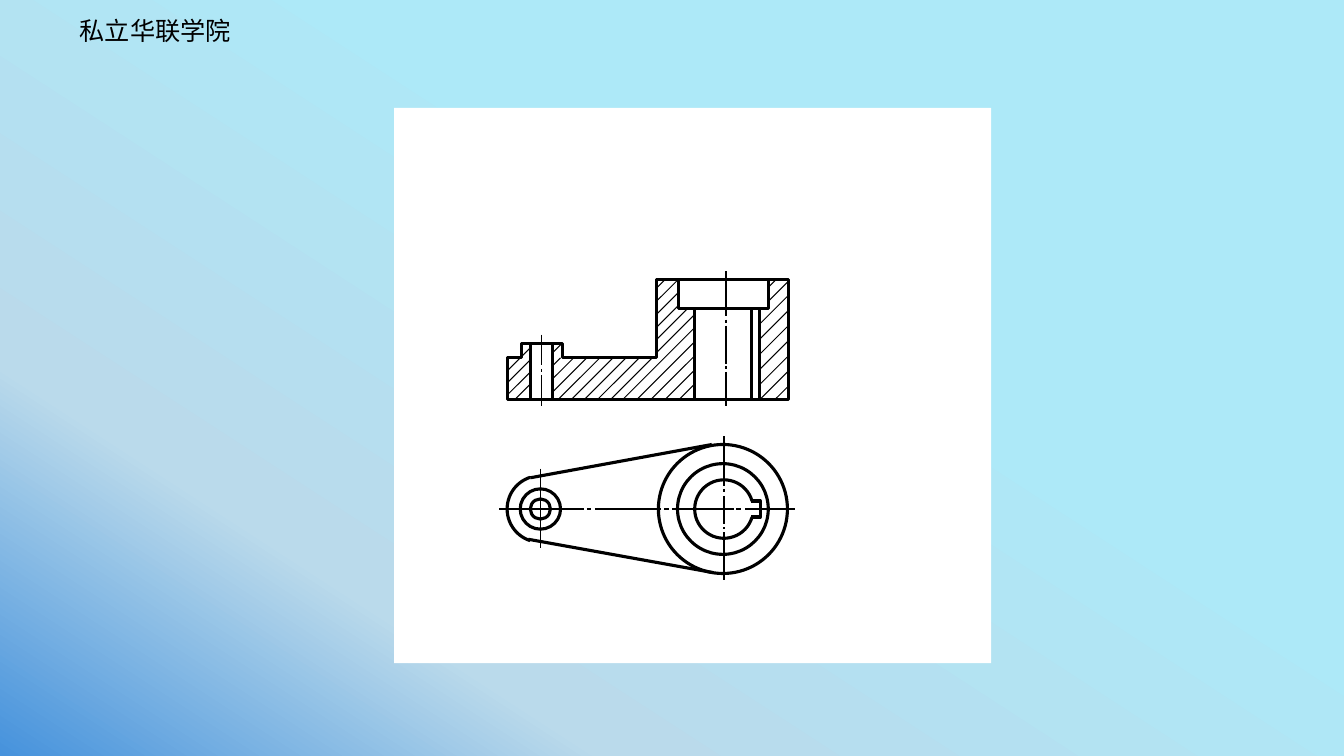
import copy
import math

from pptx import Presentation
from pptx import util as u
from pptx.dml.color import RGBColor
from pptx.enum import shapes, text
from pptx.oxml.ns import qn

COLORS = {"ink": "000000", "sheet": "FFFFFF",
          "deep": "4692DC", "pale": "BADAEB", "sky": "ADE9F8"}
FONT = "Noto Sans CJK JP"
EDGE, AXIS, HATCH = 2.25, 1, 0.75  # line widths in points


def rgb(name):
    return RGBColor.from_string(COLORS[name])


class View:
    """Draws on a slide in inches from the top left corner of one view."""

    def __init__(self, slide, left, top):
        self.shapes, self.left, self.top = slide.shapes, left, top

    def place(self, x, y):
        return u.Inches(self.left + x), u.Inches(self.top + y)

    def ink(self, shape, width):
        shape.line.color.rgb = rgb("ink")
        shape.line.width = u.Pt(width)

    def line(self, start, end, width=EDGE):
        connector = self.shapes.add_connector(
            shapes.MSO_CONNECTOR.STRAIGHT, *self.place(*start), *self.place(*end))
        self.ink(connector, width)
        properties = connector._element.spPr
        properties.append(properties.makeelement(qn("a:effectLst"), {}))

    def outline(self, points, close=False):
        first, *others = [self.place(*point) for point in points]
        builder = self.shapes.build_freeform(*first, scale=1.0)
        builder.add_line_segments(others, close=close)
        shape = builder.convert_to_shape()
        shape.shadow.inherit = False
        shape.fill.background()
        self.ink(shape, EDGE)

    def circle(self, centre, radius):
        x, y = centre
        shape = self.shapes.add_shape(
            shapes.MSO_SHAPE.OVAL, *self.place(x - radius, y - radius),
            u.Inches(2 * radius), u.Inches(2 * radius))
        shape.shadow.inherit = False
        shape.fill.background()
        self.ink(shape, EDGE)

    def arc(self, centre, radius, start, end, steps=48):
        """Open arc; degrees run clockwise from the right."""
        angles = [math.radians(start + (end - start) * i / steps)
                  for i in range(steps + 1)]
        self.outline([(centre[0] + radius * math.cos(a),
                       centre[1] + radius * math.sin(a)) for a in angles])

    def vertical_axis(self, x, dashes):
        for start, end in dashes:
            self.line((x, start), (x, end), AXIS)

    def horizontal_axis(self, y, dashes):
        for start, end in dashes:
            self.line((start, y), (end, y), AXIS)

    def hatch(self, box, first, step, count):
        """Lines x + y = constant, clipped to the box."""
        left, top, right, bottom = box
        for i in range(count):
            total = first + i * step
            x_low, x_high = max(left, total - bottom), min(right, total - top)
            self.line((x_low, total - x_low), (x_high, total - x_high), HATCH)


def paint_background(slide):
    fill = slide.background.fill
    fill.gradient()
    fill.gradient_angle = 57
    stop_list = slide.background._cSld.find(".//" + qn("a:gsLst"))
    stop_list.append(copy.deepcopy(stop_list[-1]))
    stops = zip(fill.gradient_stops, (("deep", 0), ("pale", 0.24), ("sky", 0.62)))
    for stop, (name, position) in stops:
        stop.color.rgb = rgb(name)
        stop.position = position


def school_name(slide, left, top, width, height):
    box = slide.shapes.add_textbox(*map(u.Inches, (left, top, width, height)))
    frame = box.text_frame
    inset = u.Inches(0.05)
    settings = {"word_wrap": True, "auto_size": text.MSO_AUTO_SIZE.SHAPE_TO_FIT_TEXT,
                "margin_left": inset, "margin_right": inset,
                "margin_top": inset, "margin_bottom": inset}
    for key, value in settings.items():
        setattr(frame, key, value)
    run = frame.paragraphs[0].add_run()
    run.text = "私立华联学院"
    run.font.size, run.font.name = u.Pt(18), FONT
    run.font.color.rgb = rgb("ink")
    properties = run.font._element
    properties.append(properties.makeelement(qn("a:ea"), {"typeface": FONT}))


def section_view(slide, left, top):
    view = View(slide, left, top)
    hatched_areas = [
        ((0, 0.69, 0.22, 1.2), 0.91, 0.12, 4),
        ((0.44, 0.65, 0.53, 0.77), 1.18, 0.13, 1),
        ((0.44, 0.78, 1.48, 1.2), 1.31, 0.13, 8),
        ((1.15, 0.29, 1.85, 1.19), 2.34, 0.14, 5),
        ((1.48, 0.29, 1.85, 0.78), 2.08, 0.13, 2),
        ((1.48, 0, 1.69, 0.48), 1.57, 0.13, 4),
        ((2.51, 0.17, 2.78, 1.19), 2.95, 0.15, 7),
        ((2.59, 0, 2.79, 0.23), 2.67, 0.14, 2),
    ]
    for area in hatched_areas:
        view.hatch(*area)
    counterbore = [(1.7, 0), (1.7, 0.29), (2.59, 0.29), (2.59, 0)]
    view.outline(counterbore)
    for top_edge, walls in ((0.29, (1.86, 2.42, 2.5)), (0.64, (0.23, 0.45))):
        for x in walls:
            view.line((x, top_edge), (x, 1.2))
    lever = [(0, 1.19), (0, 0.78), (0.14, 0.78), (0.14, 0.64), (0.55, 0.64),
             (0.55, 0.78), (1.48, 0.78), (1.48, 0), (2.79, 0), (2.79, 1.19)]
    view.outline(lever, close=True)
    view.vertical_axis(0.34, [(0.55, 0.85), (0.89, 0.92), (0.95, 1.26)])
    view.vertical_axis(2.17, [(-0.08, 0.37), (0.4, 0.43), (0.46, 0.84),
                              (0.86, 0.89), (0.92, 1.26)])


def plan_view(slide, left, top):
    view = View(slide, left, top)
    middle = 0.65
    pin, hub, bore = (0.33, middle), (2.14, middle), (2.15, middle)
    view.horizontal_axis(middle, [
        (-0.08, 0.76), (0.79, 0.83), (0.87, 1.53), (1.56, 1.61),
        (1.64, 2.25), (2.27, 2.32), (2.36, 2.86)])
    view.arc(pin, 0.33, 252, 108)
    view.line((0.23, 0.34), (2.03, 0.01))
    view.line((0.21, 0.95), (2.04, 1.28))
    for centre, radius in ((hub, 0.64), (hub, 0.45), (pin, 0.2), (pin, 0.1)):
        view.circle(centre, radius)
    keyway = [(2.42, 0.57), (2.51, 0.57), (2.51, 0.73), (2.42, 0.73)]
    view.outline(keyway)
    view.arc(bore, 0.29, 16, 344)
    view.vertical_axis(pin[0], [(0.25, 1.04)])
    view.vertical_axis(bore[0], [(-0.07, 0.42), (0.45, 0.48), (0.52, 0.8),
                                 (0.83, 0.85), (0.88, 1.35)])


def drawing_sheet(slide, left, top, width, height):
    sheet = slide.shapes.add_shape(shapes.MSO_SHAPE.RECTANGLE,
                                   *map(u.Inches, (left, top, width, height)))
    sheet.shadow.inherit = False
    sheet.fill.solid()
    sheet.fill.fore_color.rgb = rgb("sheet")
    sheet.line.fill.background()
    section_view(slide, left + 1.12, top + 1.7)
    plan_view(slide, left + 1.12, top + 3.33)


def main():
    deck = Presentation()
    deck.slide_width, deck.slide_height = u.Inches(13.33), u.Inches(7.5)
    slide = deck.slides.add_slide(deck.slide_layouts[6])
    paint_background(slide)
    school_name(slide, 0.74, 0.1, 2.94, 0.4)
    drawing_sheet(slide, 3.91, 1.07, 5.92, 5.51)
    deck.save("out.pptx")


if __name__ == "__main__":
    main()
